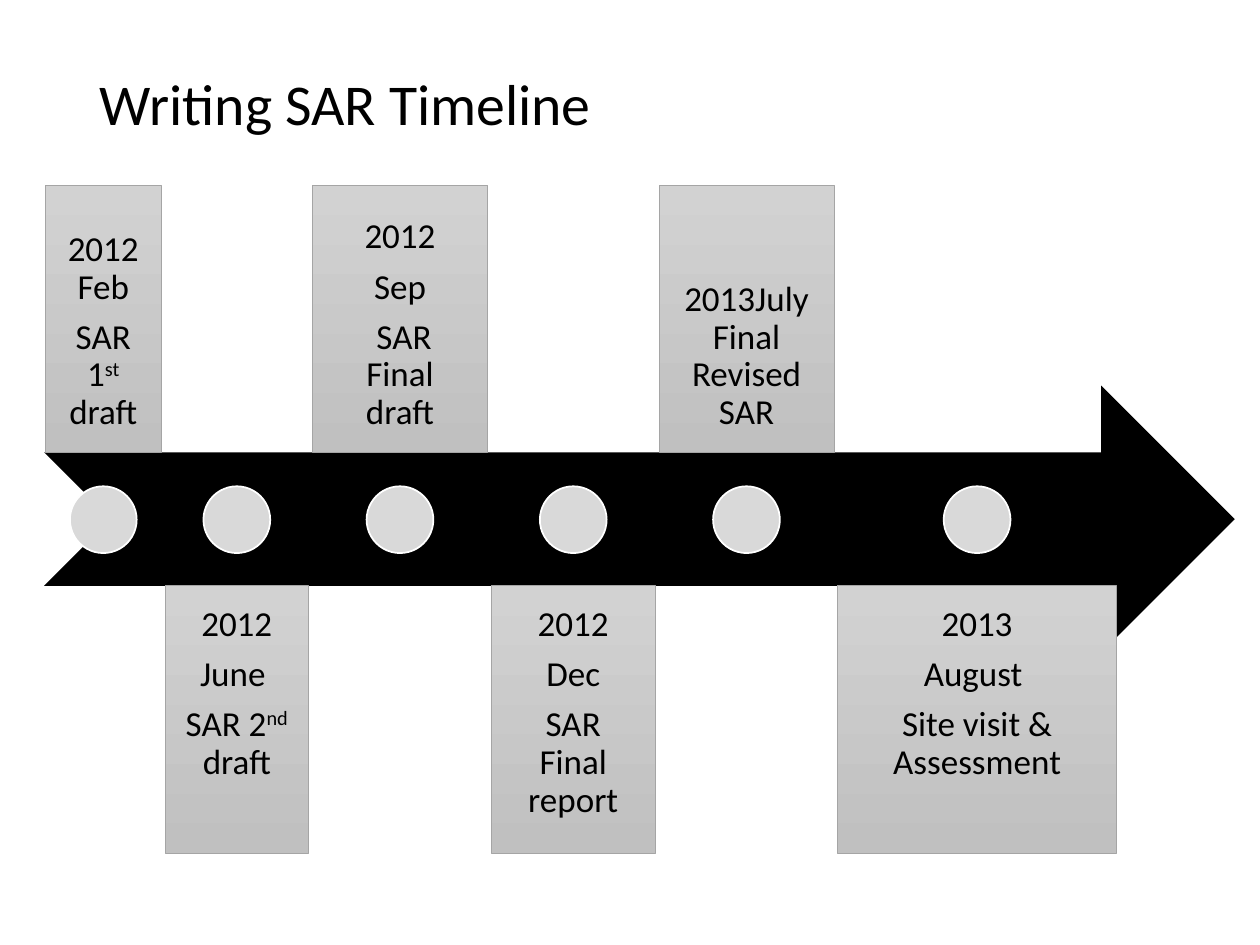
from pptx import Presentation
from pptx.dml.color import RGBColor
from pptx.enum.shapes import MSO_SHAPE as SHAPE
from pptx.enum.text import MSO_ANCHOR as ANCHOR, MSO_AUTO_SIZE as AUTO_SIZE, PP_ALIGN as ALIGN
from pptx.util import Inches, Pt

COLORS = {
    "black": "000000",
    "card_top": "D2D2D2",
    "card_bottom": "C0C0C0",
    "card_line": "A5A5A5",
    "dot": "D9D9D9",
    "dot_line": "FFFFFF",
}
FONT = "Calibri"
LEFT, GAP, CARD_HEIGHT = 0.36, 0.03, 2.12
UPPER_TOP, LOWER_TOP = 1.47, 4.65
DOT_TOP, DOT_SIZE = 3.86, 0.53

# Card width and paragraphs; text between carets is superscript.
MILESTONES = [
    (0.92, ["2012 Feb", "SAR 1^st^ draft"]),
    (1.14, ["2012", "June ", "SAR 2^nd^ draft"]),
    (1.39, ["2012", "Sep", " SAR Final draft"]),
    (1.30, ["2012", "Dec", "SAR Final report"]),
    (1.39, ["2013July Final Revised SAR"]),
    (2.21, ["2013", "August ", "Site visit & Assessment"]),
]


def color(name):
    return RGBColor.from_string(COLORS[name])


def add_shape(slide, kind, left, top, width, height):
    sp = slide.shapes.add_shape(kind, Inches(left), Inches(top), Inches(width), Inches(height))
    sp.shadow.inherit = False
    return sp


def set_line(sp, name, width):
    sp.line.color.rgb = color(name)
    sp.line.width = Pt(width)


def style_paragraph(p, size, align):
    p.alignment = align
    p.line_spacing = 0.9
    p.font.name = FONT
    p.font.size = Pt(size)
    p.font.color.rgb = color("black")


def add_title(slide, text):
    title = slide.shapes.title
    title.left, title.top = Inches(0.69), Inches(0.4)
    title.width, title.height = Inches(8.62), Inches(0.9)
    tf = title.text_frame
    tf.text = text
    tf.auto_size = AUTO_SIZE.NONE
    tf.vertical_anchor = ANCHOR.MIDDLE
    style_paragraph(tf.paragraphs[0], 33, ALIGN.LEFT)


def add_arrow(slide):
    arrow = add_shape(slide, SHAPE.NOTCHED_RIGHT_ARROW, 0.35, 3.06, 9.45, 2.12)
    arrow.fill.solid()
    arrow.fill.fore_color.rgb = color("black")
    arrow.line.fill.background()


def add_runs(p, text):
    for i, part in enumerate(text.split("^")):
        r = p.add_run()
        r.text = part
        if i % 2:
            r._r.get_or_add_rPr().set("baseline", "30000")


def add_card(slide, left, top, width, anchor, lines):
    card = add_shape(slide, SHAPE.RECTANGLE, left, top, width, CARD_HEIGHT)
    card.fill.gradient()
    card.fill.gradient_angle = 270
    for stop, name in zip(card.fill.gradient_stops, ("card_top", "card_bottom")):
        stop.color.rgb = color(name)
    set_line(card, "card_line", 0.5)

    tf = card.text_frame
    tf.word_wrap = True
    tf.vertical_anchor = anchor
    tf.margin_left = tf.margin_right = tf.margin_top = tf.margin_bottom = Inches(0.16)
    for i, line in enumerate(lines):
        p = tf.add_paragraph() if i else tf.paragraphs[0]
        style_paragraph(p, 20, ALIGN.CENTER)
        p.space_after = Pt(7)
        add_runs(p, line)


def add_dot(slide, center):
    dot = add_shape(slide, SHAPE.OVAL, center - DOT_SIZE / 2, DOT_TOP, DOT_SIZE, DOT_SIZE)
    dot.fill.solid()
    dot.fill.fore_color.rgb = color("dot")
    set_line(dot, "dot_line", 1)


def add_milestones(slide):
    """Cards alternate above and below the arrow, each with a dot at its centre."""
    left = LEFT
    for i, (width, lines) in enumerate(MILESTONES):
        top, anchor = (LOWER_TOP, ANCHOR.TOP) if i % 2 else (UPPER_TOP, ANCHOR.BOTTOM)
        add_card(slide, left, top, width, anchor, lines)
        add_dot(slide, left + width / 2)
        left += width + GAP


def main():
    prs = Presentation()
    prs.slide_width, prs.slide_height = Inches(10), Inches(7.5)
    slide = prs.slides.add_slide(prs.slide_layouts[5])
    add_title(slide, "Writing SAR Timeline")
    add_arrow(slide)
    add_milestones(slide)
    prs.save("out.pptx")


if __name__ == "__main__":
    main()
